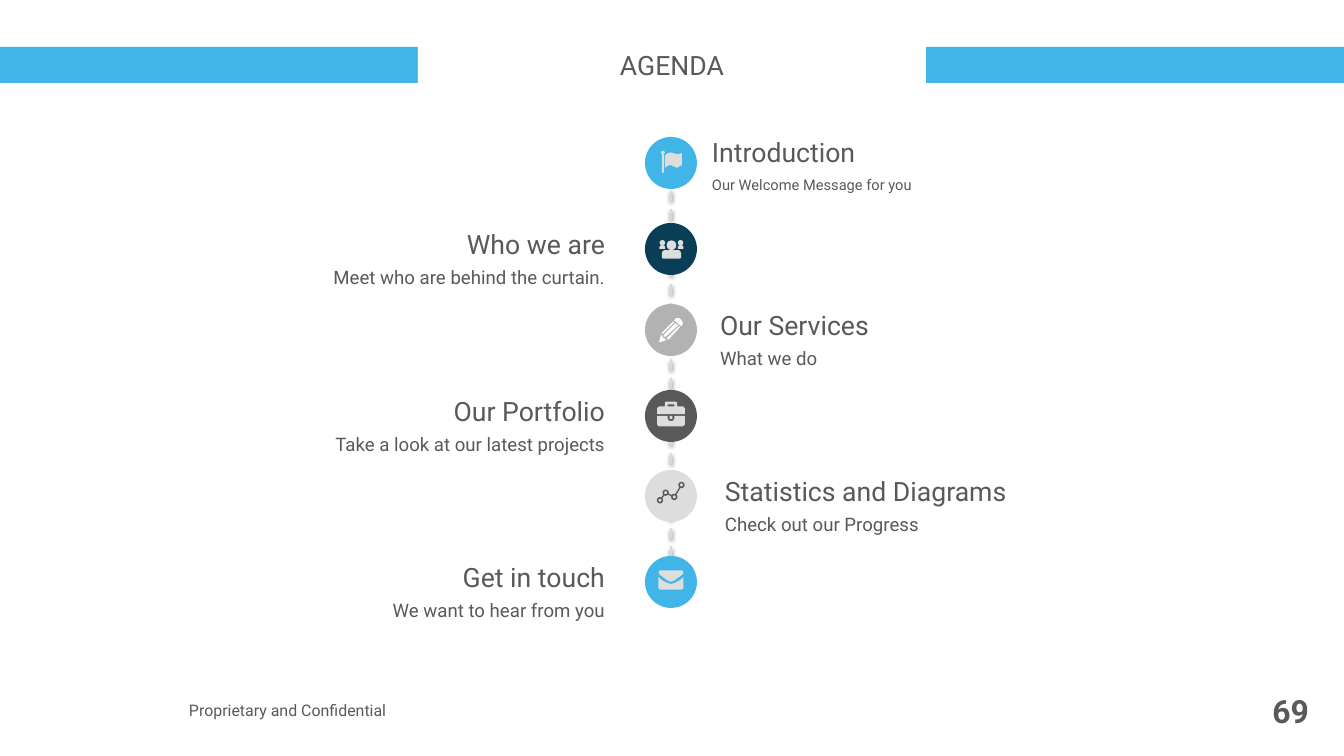
import math

import pptx
import pptx.dml.color
import pptx.enum.dml
import pptx.enum.shapes
import pptx.enum.text
import pptx.oxml
import pptx.util

PX = 9555  # EMU per px
SKY, NAVY, SILVER, SLATE, PALE, WHITE = "41B5E8", "0A3E56", "B2B2B2", "58595B", "DDDDDD", "FFFFFF"
ALIGN = pptx.enum.text.PP_ALIGN
MIDDLE = pptx.enum.text.MSO_ANCHOR.MIDDLE
PRESET = pptx.enum.shapes.MSO_SHAPE


def paint(shape, color):
    """Give a shape a flat fill with no line or shadow."""
    shape.shadow.inherit = False
    shape.fill.solid()
    shape.fill.fore_color.rgb = pptx.dml.color.RGBColor.from_string(color)
    shape.line.fill.background()


def write(shape, lines, align, pad_x, pad_y, anchor=pptx.enum.text.MSO_ANCHOR.TOP):
    """Fill a shape with (text, size, bold, line spacing, space before) lines."""
    frame = shape.text_frame
    frame.word_wrap = True
    frame.vertical_anchor = anchor
    frame.margin_left = frame.margin_right = pad_x * PX
    frame.margin_top = frame.margin_bottom = pad_y * PX
    for i, (text, size, bold, spacing, before) in enumerate(lines):
        paragraph = frame.add_paragraph() if i else frame.paragraphs[0]
        paragraph.text = text
        paragraph.alignment = align
        paragraph.line_spacing = spacing
        if before:
            paragraph.space_before = pptx.util.Pt(before)
        paragraph.font.name = "Roboto"
        paragraph.font.size = pptx.util.Pt(size)
        paragraph.font.bold = bold
        paragraph.font.color.rgb = pptx.dml.color.RGBColor.from_string(SLATE)


deck = pptx.Presentation()
deck.slide_width, deck.slide_height = 1344 * PX, 756 * PX
shapes = deck.slides.add_slide(deck.slide_layouts[6]).shapes

# Header and footer
band = shapes.add_shape(PRESET.RECTANGLE, 0, 47 * PX, 1344 * PX, 36 * PX)
paint(band, SKY)
page_number = shapes.add_textbox(1252 * PX, 691 * PX, 57 * PX, 39 * PX)
write(page_number, [("69", 24, True, 1.0, 0)], ALIGN.RIGHT, 0, 0, MIDDLE)
footer = shapes.add_textbox(185 * PX, 679 * PX, 334 * PX, 62 * PX)
write(footer, [("Proprietary and Confidential", 12, False, 1.0, 0)], ALIGN.LEFT, 4, 4, MIDDLE)
title = shapes.add_shape(PRESET.RECTANGLE, 418 * PX, 39 * PX, 508 * PX, 52 * PX)
paint(title, WHITE)
write(title, [("AGENDA", 20, False, 1.0, 0)], ALIGN.CENTER, 10, 10, MIDDLE)

# Dashed timeline
AXIS = 671
timeline = shapes.add_connector(pptx.enum.shapes.MSO_CONNECTOR.STRAIGHT,
                                AXIS * PX, 172 * PX, AXIS * PX, 570 * PX)
timeline.line.color.rgb = pptx.dml.color.RGBColor.from_string("D9D9D9")
timeline.line.width = pptx.util.Pt(2)
timeline.line.dash_style = pptx.enum.dml.MSO_LINE.DASH
timeline._element.spPr.append(pptx.oxml.parse_xml(
    '<a:effectLst xmlns:a="http://schemas.openxmlformats.org/drawingml/2006/main">'
    '<a:outerShdw blurRad="39370" dist="20320" dir="5400000" algn="t" rotWithShape="0">'
    '<a:srgbClr val="000000"><a:alpha val="38000"/></a:srgbClr></a:outerShdw></a:effectLst>'))

# Icon outlines, in tenths of a px from the centre of the disc.
# A circle is (x, y, radius); any other outline is a list of points.
flag = [
    (-81, -103, 19),
    [(-91, -84), (-72, -84), (-72, 96), (-91, 96)],
    [(-62, -77), (-33, -96), (-5, -105), (33, -96), (62, -86), (100, -96), (110, -96),
     (110, 19), (62, 48), (33, 38), (-5, 19), (-33, 29), (-62, 48)],
]
people = [
    (-86, -62, 27), (96, -62, 27), (5, -38, 48),
    [(-115, 0), (-115, -22), (-105, -34), (-67, -34), (-58, -22), (-58, 0)],
    [(68, 0), (68, -22), (77, -34), (115, -34), (125, -22), (125, 0)],
    [(-91, 86), (-91, 45), (-85, 25), (-70, 11), (80, 11), (95, 25), (101, 45),
     (101, 86), (90, 96), (-80, 96)],
]
pencil = [
    [(100, -38), (33, -96), (43, -115), (67, -122), (91, -115), (113, -86), (119, -67), (113, -48)],
    [(-38, 77), (-33, 96), (-24, 96), (91, -29), (81, -38)],
    [(-91, 29), (-88, 38), (-81, 38), (33, -77), (24, -86)],
    [(45, -67), (-72, 48), (-72, 67), (-53, 67), (72, -48)],
    [(-53, 105), (-55, 88), (-80, 77), (-91, 57), (-100, 48), (-120, 124)],
]
briefcase = [
    [(-139, -19), (-139, -77), (-120, -96), (-62, -96), (-62, -134), (-48, -144),
     (48, -144), (62, -134), (62, -96), (120, -96), (139, -77), (139, -19)],
    [(-33, -96), (33, -96), (33, -115), (-33, -115)],
    [(-139, 0), (-139, 86), (-120, 105), (120, 105), (139, 86), (139, 0),
     (33, 0), (33, 29), (19, 48), (-19, 48), (-33, 29), (-33, 0)],
    [(-14, 0), (14, 0), (14, 29), (-14, 29)],
]
envelope = [
    [(-125, -48), (-90, -19), (-48, 5), (-10, 19), (10, 19), (48, 5), (90, -19),
     (125, -48), (125, 62), (110, 77), (-110, 77), (-125, 62)],
    [(-110, -115), (110, -115), (125, -100), (120, -82), (105, -67), (40, -19),
     (10, -4), (-10, -4), (-40, -19), (-105, -67), (-120, -82), (-125, -100)],
]
nodes = [(-110, 43), (-53, -33), (33, 10), (105, -110)]
graph = [(x, y, radius) for x, y in nodes for radius in (31, 16)]
for (x1, y1), (x2, y2) in zip(nodes, nodes[1:]):
    length = math.hypot(x2 - x1, y2 - y1)
    ux, uy = (x2 - x1) / length, (y2 - y1) / length
    graph.append([(round(x1 + along * ux - side * uy), round(y1 + along * uy + side * ux))
                  for along, side in ((30, -6), (length - 30, -6), (length - 30, 6), (30, 6))])

# Centre y, disc colour, icon, icon colour, heading, detail, detail size,
# space before, text left, padding, alignment
steps = [
    (163, SKY, flag, PALE, "Introduction", "Our Welcome Message for you",
     11, 4.4, 702, 10, ALIGN.LEFT),
    (249, NAVY, people, PALE, "Who we are", "Meet who are behind the curtain.",
     14, 2.8, 261, 23, ALIGN.RIGHT),
    (330, SILVER, pencil, WHITE, "Our Services", "What we do",
     14, 2.8, 697, 23, ALIGN.LEFT),
    (416, SLATE, briefcase, PALE, "Our Portfolio", "Take a look at our latest projects",
     14, 2.8, 261, 23, ALIGN.RIGHT),
    (496, PALE, graph, SLATE, "Statistics and Diagrams", "Check out our Progress",
     14, 2.8, 702, 23, ALIGN.LEFT),
    (582, SKY, envelope, PALE, "Get in touch", "We want to hear from you",
     14, 2.8, 261, 23, ALIGN.RIGHT),
]
for (center, disc_color, outlines, icon_color, heading, detail,
     detail_size, before, left, pad, align) in steps:
    disc = shapes.add_shape(PRESET.OVAL, (AXIS - 26) * PX, (center - 26) * PX, 52 * PX, 52 * PX)
    paint(disc, disc_color)

    builder = None
    for outline in outlines:
        if isinstance(outline, tuple):
            x, y, radius = outline
            outline = [(round(x + radius * math.cos(k * math.pi / 12)),
                        round(y + radius * math.sin(k * math.pi / 12))) for k in range(24)]
        if builder is None:
            builder = shapes.build_freeform(*outline[0], scale=PX / 10)
        else:
            builder.move_to(*outline[0])
        builder.add_line_segments(outline[1:], close=True)
    paint(builder.convert_to_shape(AXIS * PX, center * PX), icon_color)

    label = shapes.add_textbox(left * PX, (center - 35) * PX, 367 * PX, 110 * PX)
    write(label, [(heading, 20, False, 1.1, 0), (detail, detail_size, False, 1.1, before)],
          align, pad, pad // 2)

deck.save("out.pptx")
